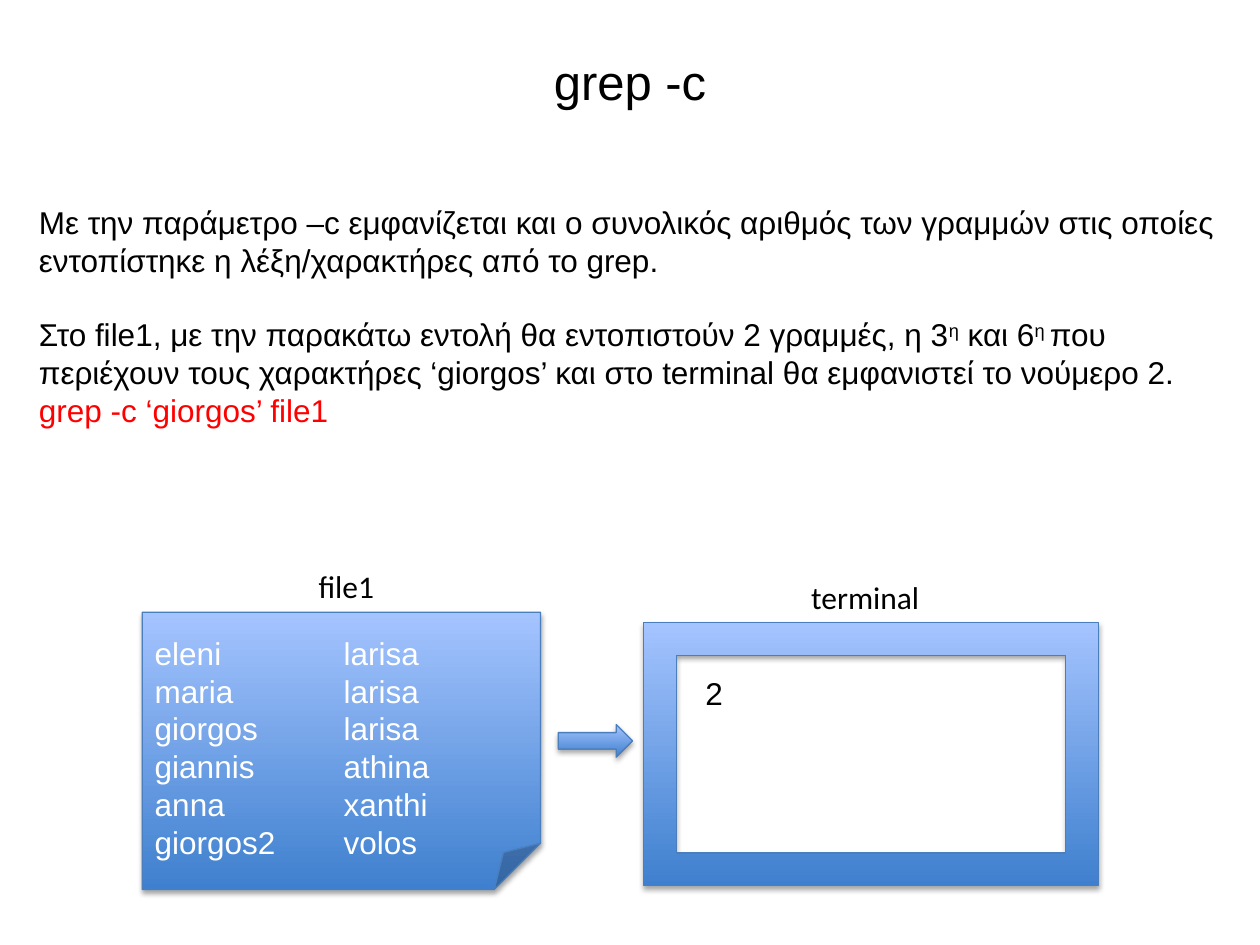
"""Build the slide that explains grep -c with a file and a terminal."""
from lxml import etree
from pptx import Presentation
from pptx.dml.color import RGBColor
from pptx.enum.shapes import MSO_SHAPE as SHAPE
from pptx.enum.text import MSO_ANCHOR as ANCHOR, PP_ALIGN as ALIGN
from pptx.oxml import parse_xml
from pptx.oxml.ns import qn
from pptx.util import Inches, Pt

SHADOW = (
    '<a:outerShdw xmlns:a="http://schemas.openxmlformats.org/drawingml/2006/main" '
    'blurRad="39370" dist="22860" dir="5400000" rotWithShape="0">'
    '<a:srgbClr val="000000"><a:alpha val="35000"/></a:srgbClr></a:outerShdw>'
)


def color(value):
    return RGBColor.from_string(value)


def write(frame, text, size=18, font="Arial", fill="000000", align=ALIGN.LEFT,
          before=0, tab=None, first=False):
    """Add one paragraph; text between carets is superscript."""
    paragraph = frame.paragraphs[0] if first else frame.add_paragraph()
    paragraph.alignment = align
    paragraph.space_before = Pt(before)
    if tab:
        tabs = etree.SubElement(paragraph._p.get_or_add_pPr(), qn("a:tabLst"))
        etree.SubElement(tabs, qn("a:tab"), pos=str(Inches(tab)), algn="l")
    for index, part in enumerate(text.split("^")):
        run = paragraph.add_run()
        run.text = part
        run.font.size = Pt(size)
        run.font.name = font
        run.font.color.rgb = color(fill)
        if index % 2:
            run._r.get_or_add_rPr().set("baseline", "30000")


presentation = Presentation()
presentation.slide_width = Inches(10)
presentation.slide_height = Inches(7.5)
slide = presentation.slides.add_slide(presentation.slide_layouts[6])

shapes = {}
for name, preset, box in [
    ("file", SHAPE.FOLDED_CORNER, (1.13, 4.86, 3.16, 2.2)),
    ("arrow", SHAPE.RIGHT_ARROW, (4.43, 5.75, 0.59, 0.26)),
    ("terminal", SHAPE.FRAME, (5.11, 4.94, 3.61, 2.09)),
]:
    shape = slide.shapes.add_shape(preset, *map(Inches, box))
    shape.fill.gradient()
    shape.fill.gradient_angle = 90
    for stop, value in zip(shape.fill.gradient_stops, ("3F80CE", "A4C4FF")):
        stop.color.rgb = color(value)
    shape.line.color.rgb = color("4B7EBC")
    shape.line.width = Pt(0.75)
    shape.shadow.inherit = False
    shape._element.spPr.find(qn("a:effectLst")).append(parse_xml(SHADOW))
    shapes[name] = shape

file_frame = shapes["file"].text_frame
file_frame.vertical_anchor = ANCHOR.TOP
file_frame.margin_top = Inches(0.17)
file_frame.margin_bottom = 0
people = [
    ("eleni", "larisa"),
    ("maria", "larisa"),
    ("giorgos", "larisa"),
    ("giannis", "athina"),
    ("anna", "xanthi"),
    ("giorgos2", "volos"),
]
for index, person in enumerate(people):
    write(file_frame, "\t".join(person), fill="FFFFFF", tab=1.5, first=index == 0)

body = [
    ("Με την παράμετρο –c εμφανίζεται και ο συνολικός αριθμός των γραμμών "
     "στις οποίες εντοπίστηκε η λέξη/χαρακτήρες από το grep.", {}),
    ("Στο file1, με την παρακάτω εντολή θα εντοπιστούν 2 γραμμές, η 3^η^ και 6^η ^που "
     "περιέχουν τους χαρακτήρες ‘giorgos’ και στο terminal θα εμφανιστεί το νούμερο 2.",
     {"before": 21}),
    ("grep -c ‘giorgos’ file1", {"fill": "FF0000"}),
]
for box, wrap, anchor, paragraphs in [
    ((0.5, 0.3, 9, 0.68), True, ANCHOR.MIDDLE,
     [("grep -c", {"size": 28, "align": ALIGN.CENTER})]),
    ((0.21, 1.56, 9.61, 1.92), True, ANCHOR.TOP, body),
    ((5.5, 5.3, 2.89, 0.4), True, ANCHOR.TOP, [("2", {})]),
    ((2.43, 4.45, 0.65, 0.4), False, ANCHOR.TOP, [("file1", {"font": "Calibri"})]),
    ((6.34, 4.54, 1.07, 0.4), False, ANCHOR.TOP, [("terminal", {"font": "Calibri"})]),
]:
    frame = slide.shapes.add_textbox(*map(Inches, box)).text_frame
    frame.word_wrap = wrap
    frame.vertical_anchor = anchor
    for index, (text, style) in enumerate(paragraphs):
        write(frame, text, first=index == 0, **style)

presentation.save("out.pptx")
